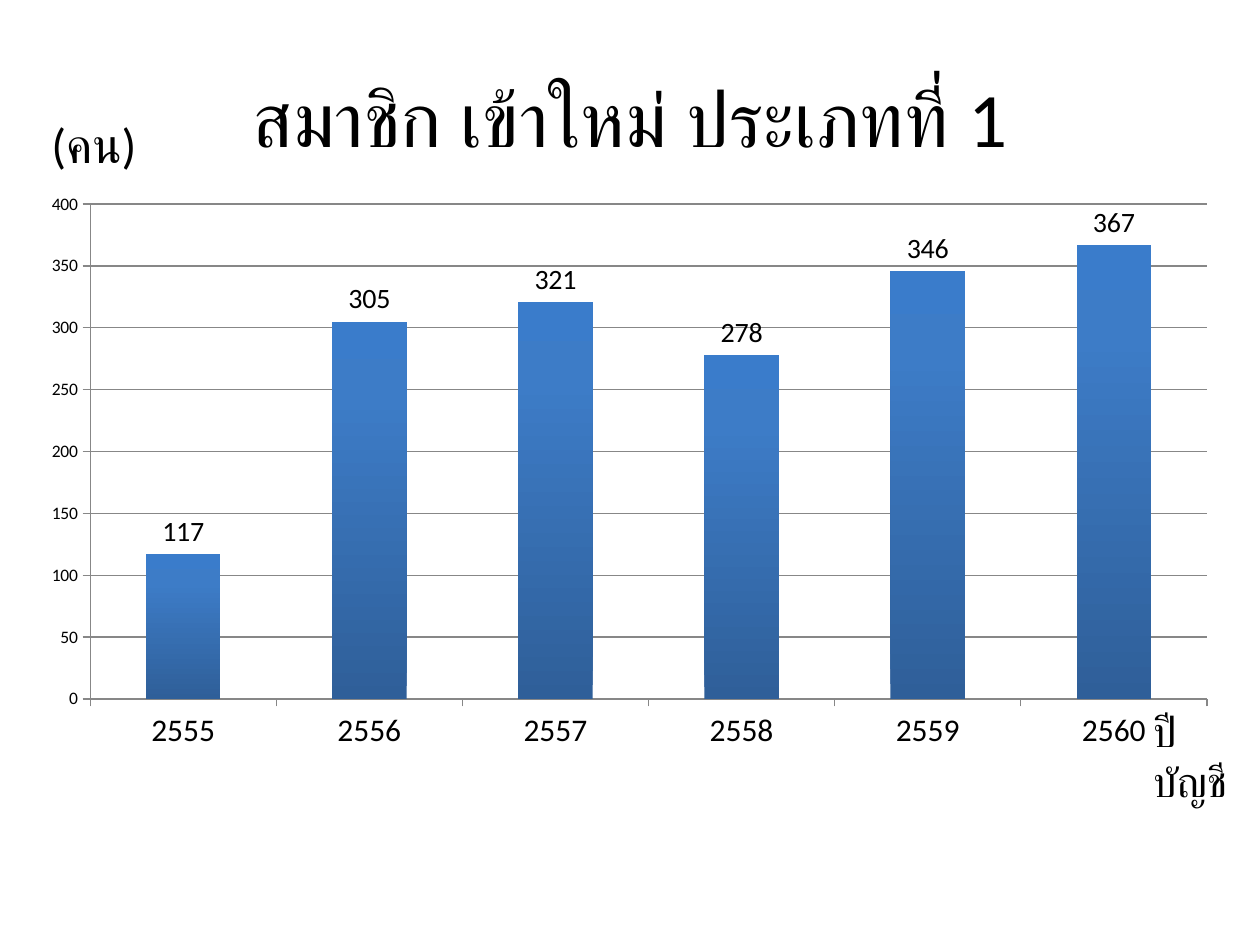
from lxml import etree
from pptx import Presentation
from pptx.chart.data import CategoryChartData
from pptx.dml.color import RGBColor
from pptx.enum.chart import XL_CHART_TYPE, XL_LABEL_POSITION, XL_TICK_MARK
from pptx.enum.text import MSO_ANCHOR, PP_ALIGN
from pptx.oxml import parse_xml
from pptx.oxml.ns import nsdecls, qn
from pptx.util import Inches, Pt

FONT = "Calibri"
BLACK, GRAY = "000000", "878787"
TITLE = ("สมาชิก เข้าใหม่ ประเภทที่ 1", 44, (0.5, 0.3, 9, 1.25))
CAPTIONS = [
    ("ปีบัญชี", 24, (9.06, 5.55, 0.94, 0.5)),
    ("(คน)", 28, (0.31, 0.86, 1.48, 0.57)),
]
CHART_BOX = (0.22, 1.45, 9.55, 4.59)
NEW_MEMBERS = {"2555": 117, "2556": 305, "2557": 321,
               "2558": 278, "2559": 346, "2560": 367}
BAR_GRADIENT = [(0, "2F5F99"), (80, "3D7CC7"), (100, "3A7CCB")]


def color(value):
    return RGBColor.from_string(value)


def style_font(font, size):
    font.name = FONT
    font.size = Pt(size)
    font.color.rgb = color(BLACK)


def write(shape, text, size):
    shape.text_frame.word_wrap = True
    paragraph = shape.text_frame.paragraphs[0]
    run = paragraph.add_run()
    run.text = text
    style_font(run.font, size)
    return paragraph


def add_title(slide):
    text, size, box = TITLE
    title = slide.shapes.title
    title.left, title.top, title.width, title.height = map(Inches, box)
    title.text_frame.vertical_anchor = MSO_ANCHOR.MIDDLE
    write(title, text, size).alignment = PP_ALIGN.CENTER


def fill_with_gradient(series, stops):
    """Fill the bars from bottom to top with any number of stops."""
    series.format.fill.gradient()
    gradient = series.format.fill._xPr.find(qn("a:gradFill"))
    for child in list(gradient):
        gradient.remove(child)
    gradient.append(parse_xml(f"<a:gsLst {nsdecls('a')}/>"))
    for percent, value in stops:
        stop = etree.SubElement(gradient[0], qn("a:gs"), pos=str(percent * 1000))
        etree.SubElement(stop, qn("a:srgbClr"), val=value)
    etree.SubElement(gradient, qn("a:lin"), ang=str(270 * 60000), scaled="0")


def add_member_chart(slide):
    data = CategoryChartData()
    data.categories = list(NEW_MEMBERS)
    data.add_series("Series 1", list(NEW_MEMBERS.values()))
    chart = slide.shapes.add_chart(
        XL_CHART_TYPE.COLUMN_CLUSTERED, *map(Inches, CHART_BOX), data).chart
    chart.has_title = chart.has_legend = False
    style_font(chart.font, 10)

    for axis, size in ((chart.category_axis, 18), (chart.value_axis, 10)):
        style_font(axis.tick_labels.font, size)
        axis.major_tick_mark = XL_TICK_MARK.OUTSIDE
        axis.minor_tick_mark = XL_TICK_MARK.NONE
        axis.format.line.color.rgb = color(GRAY)
    value_axis = chart.value_axis
    value_axis.minimum_scale, value_axis.maximum_scale = 0, 400
    value_axis.major_unit = 50
    value_axis.has_major_gridlines = True
    value_axis.major_gridlines.format.line.color.rgb = color(GRAY)

    plot = chart.plots[0]
    plot.gap_width = 150
    plot.vary_by_categories = False
    series = plot.series[0]
    fill_with_gradient(series, BAR_GRADIENT)
    labels = series.data_labels
    labels.show_value = True
    labels.position = XL_LABEL_POSITION.OUTSIDE_END
    style_font(labels.font, 16)


def main():
    presentation = Presentation()
    presentation.slide_width, presentation.slide_height = Inches(10), Inches(7.5)
    slide = presentation.slides.add_slide(
        presentation.slide_layouts.get_by_name("Title Only"))
    add_title(slide)
    add_member_chart(slide)
    for text, size, box in CAPTIONS:
        write(slide.shapes.add_textbox(*map(Inches, box)), text, size)
    presentation.save("out.pptx")


if __name__ == "__main__":
    main()
